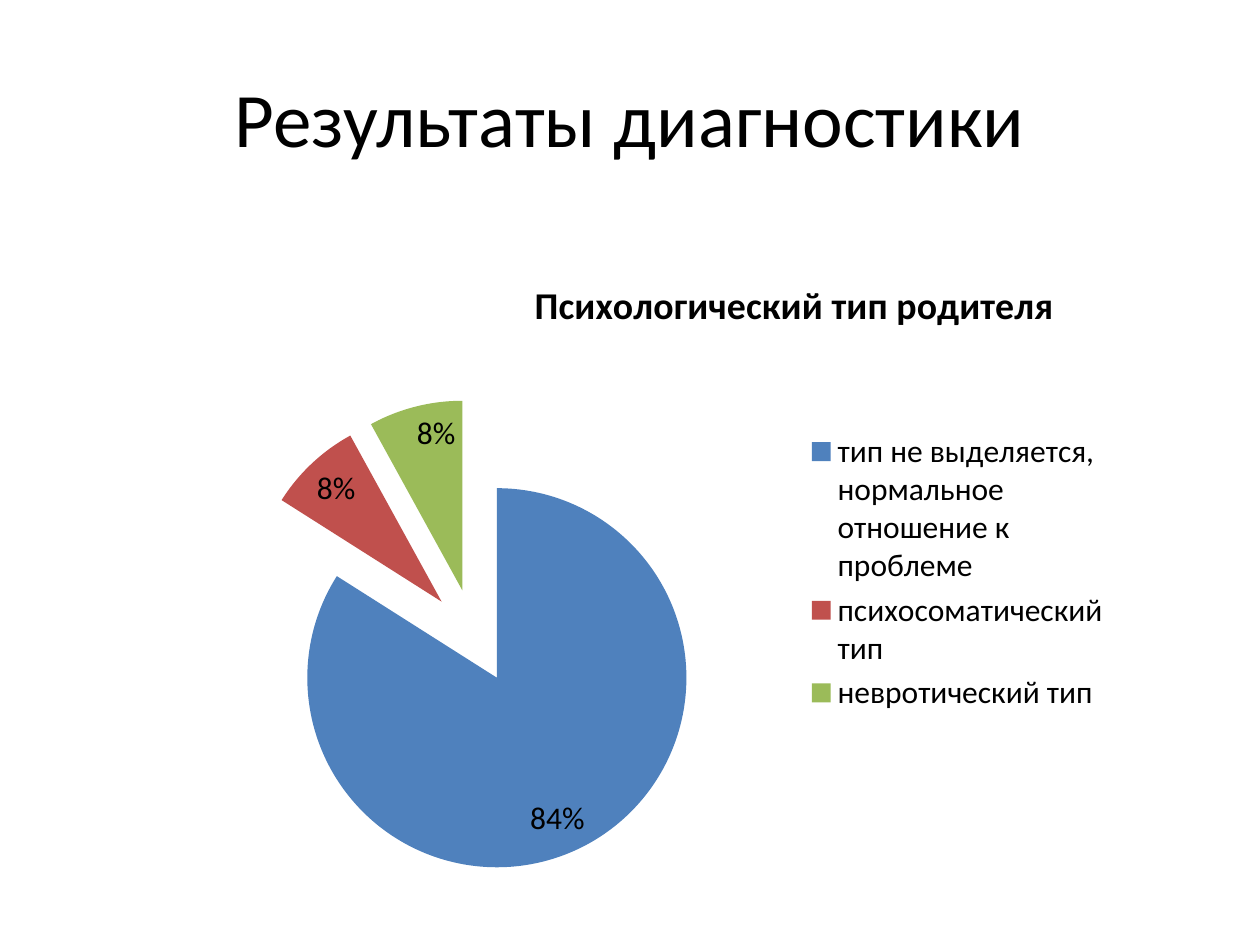
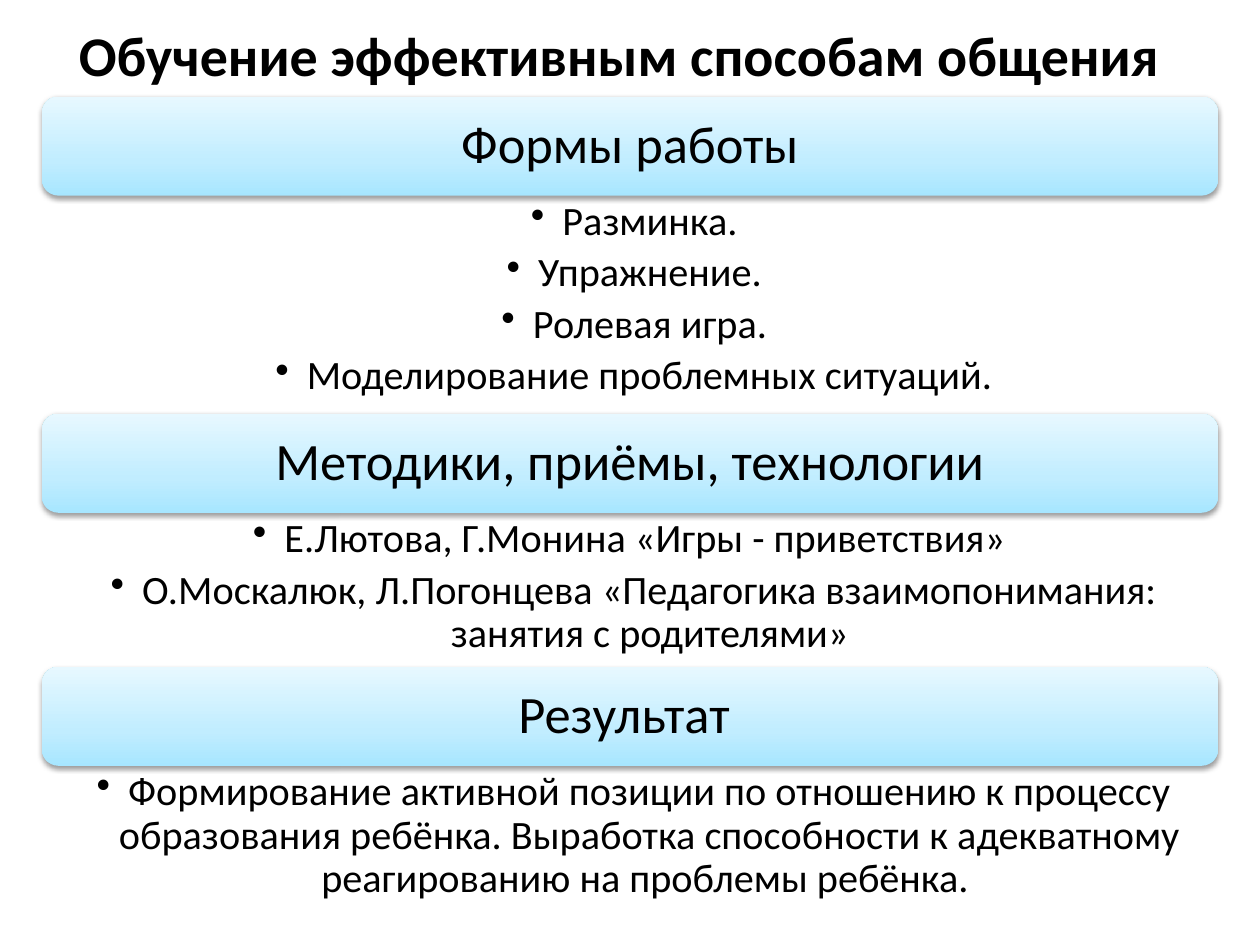
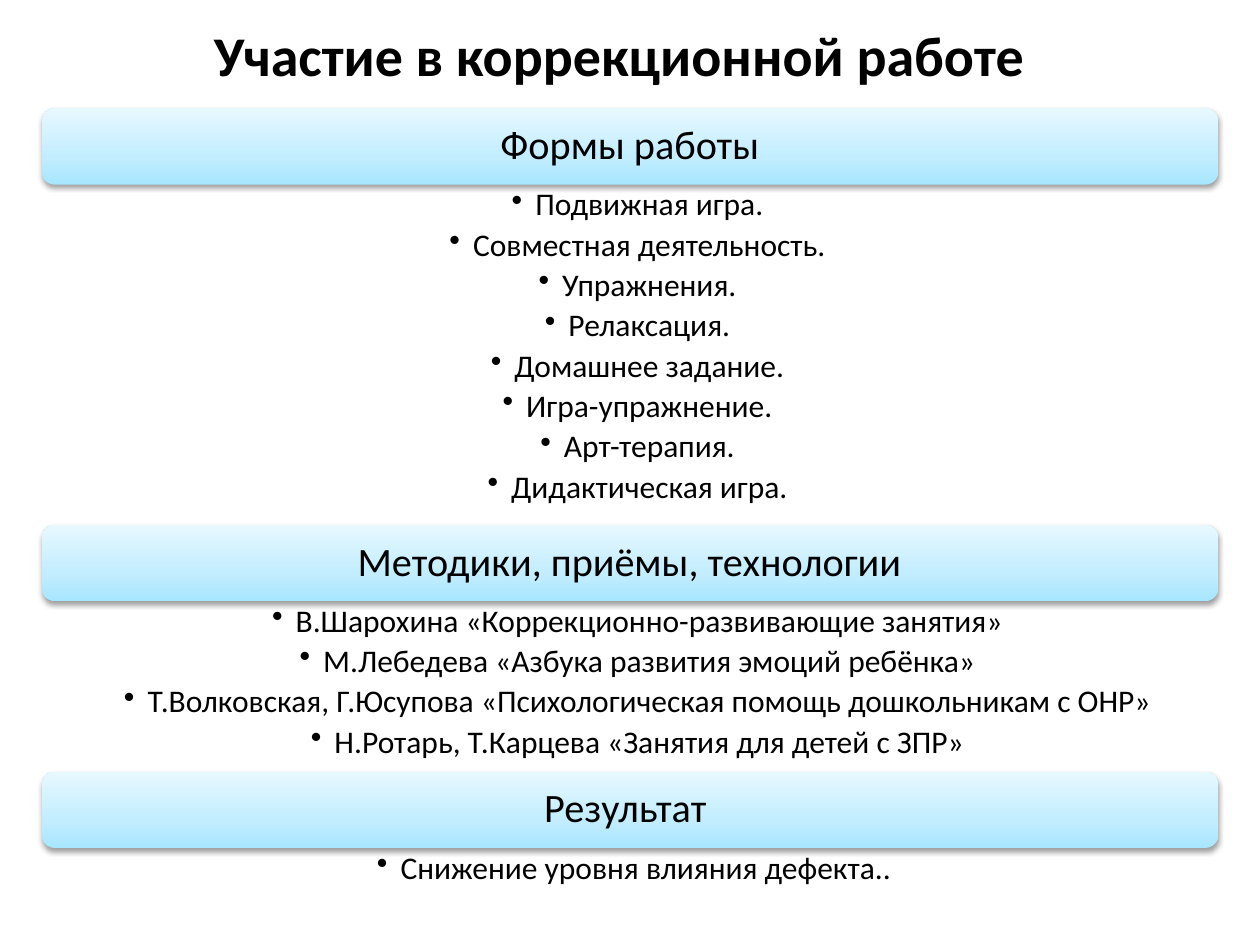
from dataclasses import dataclass

from pptx import Presentation
from pptx.chart.data import CategoryChartData
from pptx.dml.color import RGBColor
from pptx.enum.chart import XL_CHART_TYPE, XL_LABEL_POSITION, XL_LEGEND_POSITION
from pptx.enum.shapes import MSO_SHAPE
from pptx.enum.text import MSO_ANCHOR, PP_ALIGN
from pptx.oxml import parse_xml
from pptx.oxml.ns import nsdecls, qn
from pptx.util import Pt


@dataclass(frozen=True)
class Theme:
    font: str = "Calibri"
    text: str = "000000"
    band_stops: tuple = ((0, "A7E6FF"), (35, "C1EDFF"), (100, "E7F8FF"))
    slices: tuple = ("4F81BD", "C0504D", "9BBB59")
    large_title: float = 44
    title: float = 32
    chart_title: float = 21.6
    chart_text: float = 18


@dataclass(frozen=True)
class Box:
    """Position and size in points."""
    left: float
    top: float
    width: float
    height: float

    def lengths(self) -> tuple:
        return Pt(self.left), Pt(self.top), Pt(self.width), Pt(self.height)


@dataclass(frozen=True)
class Section:
    heading: str
    items: tuple
    body_height: float


@dataclass(frozen=True)
class StackStyle:
    top: float
    band_height: float
    heading_size: float
    item_size: float
    indent: float
    band_inset: float
    body_insets: tuple


@dataclass(frozen=True)
class SectionSlide:
    title: str
    style: StackStyle
    sections: tuple


THEME = Theme()
STACK_LEFT, STACK_WIDTH = 24, 672
LINE_SPACING = 0.9
SPACE_AFTER_RATIO = 0.2
FORMS, METHODS, RESULT = "Формы работы", "Методики, приёмы, технологии", "Результат "

SECTION_SLIDES = (
    SectionSlide(
        "Обучение эффективным способам общения",
        StackStyle(55.2, 56.6, 30, 23, 18, 8.6, (21.6, 2.9, 16.6, 2.9)),
        (
            Section(FORMS, ("Разминка.", "Упражнение.", "Ролевая игра.",
                            "Моделирование проблемных ситуаций."), 124.6),
            Section(METHODS, (
                "Е.Лютова, Г.Монина «Игры - приветствия» ",
                "О.Москалюк, Л.Погонцева «Педагогика взаимопонимания: занятия с родителями»",
            ), 88),
            Section(RESULT, (
                "Формирование активной позиции по отношению к процессу образования ребёнка. "
                "Выработка способности к адекватному реагированию на проблемы ребёнка. ",
            ), 82.8),
        ),
    ),
    SectionSlide(
        "Участие в коррекционной работе",
        StackStyle(62, 43.5, 23, 18, 13.5, 7.2, (21.6, 2.3, 13, 2.3)),
        (
            Section(FORMS, ("Подвижная игра.", "Совместная деятельность.", "Упражнения.",
                            "Релаксация.", "Домашнее задание.", "Игра-упражнение.",
                            "Арт-терапия.", "Дидактическая игра."), 194.5),
            Section(METHODS, (
                "В.Шарохина «Коррекционно-развивающие занятия»",
                "М.Лебедева «Азбука развития эмоций ребёнка»",
                "Т.Волковская, Г.Юсупова «Психологическая помощь дошкольникам с ОНР»",
                "Н.Ротарь, Т.Карцева «Занятия для детей с ЗПР»",
            ), 97.5),
            Section(RESULT, ("Снижение уровня влияния дефекта.. ",), 30),
        ),
    ),
)


def style_font(font, size: float, bold: bool = False) -> None:
    font.name = THEME.font
    font.size = Pt(size)
    font.bold = bold
    font.color.rgb = RGBColor.from_string(THEME.text)


def set_insets(text_frame, left: float, top: float, right: float, bottom: float) -> None:
    text_frame.margin_left, text_frame.margin_top = Pt(left), Pt(top)
    text_frame.margin_right, text_frame.margin_bottom = Pt(right), Pt(bottom)


def write_centred_line(text_frame, text: str, size: float, bold: bool = False) -> None:
    text_frame.text = text
    text_frame.word_wrap = True
    text_frame.vertical_anchor = MSO_ANCHOR.MIDDLE
    paragraph = text_frame.paragraphs[0]
    paragraph.alignment = PP_ALIGN.CENTER
    paragraph.line_spacing = 1.0
    style_font(paragraph.runs[0].font, size, bold)


def add_title(slide, text: str, box: Box, size: float, bold: bool = False) -> None:
    shape = slide.shapes.add_textbox(*box.lengths())
    write_centred_line(shape.text_frame, text, size, bold)


def add_band(slide, heading: str, box: Box, style: StackStyle) -> None:
    """Draw a rounded gradient bar with a soft shadow and a heading."""
    shape = slide.shapes.add_shape(MSO_SHAPE.ROUNDED_RECTANGLE, *box.lengths())
    shape.line.fill.background()
    shape.shadow.inherit = False
    stops = "".join(
        f'<a:gs pos="{position * 1000}"><a:srgbClr val="{color}"/></a:gs>'
        for position, color in THEME.band_stops
    )
    properties = shape._element.spPr
    properties.find(qn("a:ln")).addprevious(parse_xml(
        f'<a:gradFill {nsdecls("a")} rotWithShape="1"><a:gsLst>{stops}</a:gsLst>'
        '<a:lin ang="16200000" scaled="0"/></a:gradFill>'))
    properties.find(qn("a:effectLst")).append(parse_xml(
        f'<a:outerShdw {nsdecls("a")} blurRad="{Pt(3.1)}" dist="{Pt(1.6)}" dir="5400000" '
        'rotWithShape="0"><a:srgbClr val="000000"><a:alpha val="38000"/></a:srgbClr>'
        '</a:outerShdw>'))
    set_insets(shape.text_frame, *[style.band_inset] * 4)
    write_centred_line(shape.text_frame, heading, style.heading_size)
    shape.text_frame.paragraphs[0].line_spacing = LINE_SPACING


def add_bullets(slide, items: tuple, box: Box, style: StackStyle) -> None:
    text_frame = slide.shapes.add_textbox(*box.lengths()).text_frame
    text_frame.word_wrap = True
    set_insets(text_frame, *style.body_insets)
    text_frame.text = "\n".join(items)
    for paragraph in text_frame.paragraphs:
        paragraph.alignment = PP_ALIGN.CENTER
        paragraph.line_spacing = LINE_SPACING
        paragraph.space_after = Pt(style.item_size * SPACE_AFTER_RATIO)
        properties = paragraph._p.get_or_add_pPr()
        properties.set("marL", str(Pt(style.indent)))
        properties.set("indent", str(-Pt(style.indent)))
        properties.append(parse_xml(f'<a:buChar {nsdecls("a")} char="•"/>'))
        style_font(paragraph.runs[0].font, style.item_size)


def add_section_slide(presentation, content: SectionSlide) -> None:
    slide = presentation.slides.add_slide(presentation.slide_layouts[6])
    add_title(slide, content.title, Box(30, 0, 648, 62.4), THEME.title, bold=True)
    style = content.style
    top = style.top
    for section in content.sections:
        add_band(slide, section.heading,
                 Box(STACK_LEFT, top, STACK_WIDTH, style.band_height), style)
        top += style.band_height
        add_bullets(slide, section.items,
                    Box(STACK_LEFT, top, STACK_WIDTH, section.body_height), style)
        top += section.body_height


def set_chart_layout(parent, index: int, target: str = "", **fractions: float) -> None:
    """Place a chart part by fractions of the chart area."""
    previous = parent.find(qn("c:layout"))
    if previous is not None:
        parent.remove(previous)
    modes = "".join(f'<c:{axis}Mode val="edge"/>' for axis in "xy")
    values = "".join(f'<c:{name} val="{value}"/>' for name, value in fractions.items())
    parent.insert(index, parse_xml(
        f'<c:layout {nsdecls("c")}><c:manualLayout>{target}{modes}{values}'
        '</c:manualLayout></c:layout>'))


def add_parent_type_chart(slide, box: Box) -> None:
    data = CategoryChartData(number_format="0%")
    data.categories = ("тип не выделяется, нормальное отношение к проблеме",
                       "психосоматический тип", "невротический тип")
    data.add_series("Series 1", (0.84, 0.08, 0.08))
    chart = slide.shapes.add_chart(XL_CHART_TYPE.PIE, *box.lengths(), data).chart
    style_font(chart.font, THEME.chart_text)

    chart.has_title = True
    title_frame = chart.chart_title.text_frame
    title_frame.text = "Психологический тип родителя"
    style_font(title_frame.paragraphs[0].runs[0].font, THEME.chart_title, bold=True)
    set_chart_layout(chart.chart_title._element, 1, x=0.39, y=0.03)

    chart.has_legend = True
    chart.legend.position = XL_LEGEND_POSITION.RIGHT
    chart.legend.include_in_layout = False
    style_font(chart.legend.font, THEME.chart_text)

    plot = chart.plots[0]
    plot.vary_by_categories = True
    set_chart_layout(plot._element.getparent(), 0, '<c:layoutTarget val="inner"/>',
                     x=0.09, y=0.23, w=0.49, h=0.74)
    plot.has_data_labels = True
    labels = plot.data_labels
    labels.show_value = True
    labels.number_format = "0%"
    labels.number_format_is_linked = False
    labels.position = XL_LABEL_POSITION.INSIDE_END
    style_font(labels.font, THEME.chart_text)

    series = plot.series[0]
    for index, color in enumerate(THEME.slices):
        fill = series.points[index].format.fill
        fill.solid()
        fill.fore_color.rgb = RGBColor.from_string(color)
    series._element.find(qn("c:dPt")).addprevious(
        parse_xml(f'<c:explosion {nsdecls("c")} val="25"/>'))


def add_results_slide(presentation) -> None:
    slide = presentation.slides.add_slide(presentation.slide_layouts[6])
    add_title(slide, "Результаты диагностики", Box(36, 21.6, 648, 90), THEME.large_title)
    add_parent_type_chart(slide, Box(84, 144, 558, 366))


def main() -> None:
    presentation = Presentation()
    presentation.slide_width, presentation.slide_height = Pt(720), Pt(540)
    add_results_slide(presentation)
    for content in SECTION_SLIDES:
        add_section_slide(presentation, content)
    presentation.save("out.pptx")


if __name__ == "__main__":
    main()
